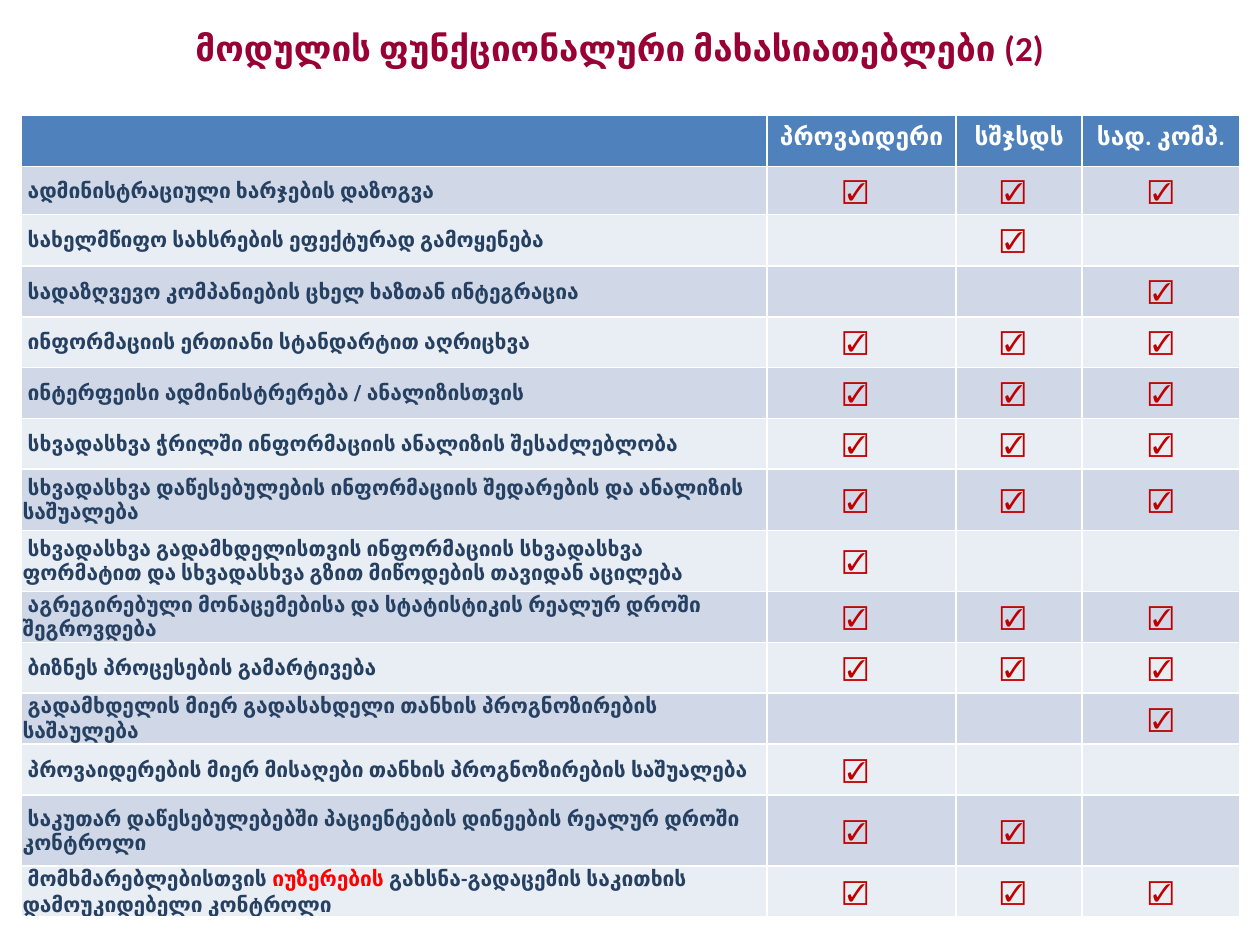
from dataclasses import dataclass
from pptx import Presentation
from pptx.dml.color import RGBColor as Rgb
from pptx.enum import text as t
from pptx.util import Pt


@dataclass(frozen=True)
class Theme:
    main: str = "Calibri"
    label: str = "Roboto"
    title: str = "990033"
    head: str = "4F81BD"
    white: str = "FFFFFF"
    ink: str = "254061"
    alert: str = "FF0000"
    tick: str = "C00000"
    bands: tuple = ("D0D8E8", "E9EDF4")
    big: float = 20
    mid: float = 14
    small: float = 12


THEME = Theme()
WIDTHS = (426, 108, 72, 90)
HEADS = ("", "პროვაიდერი", "სშჯსდს", "სად. კომპ.")
ROWS = (
    ("ადმინისტრაციული ხარჯების დაზოგვა", "111", 27.5),
    ("სახელმწიფო სახსრების ეფექტურად გამოყენება", "010", 29),
    ("სადაზღვევო კომპანიების ცხელ ხაზთან ინტეგრაცია", "001", 29),
    ("ინფორმაციის ერთიანი სტანდარტით აღრიცხვა", "111", 29),
    ("ინტერფეისი ადმინისტრერება / ანალიზისთვის", "111", 29),
    ("სხვადასხვა ჭრილში ინფორმაციის ანალიზის შესაძლებლობა", "111", 29),
    ("სხვადასხვა დაწესებულების ინფორმაციის შედარების და ანალიზის საშუალება", "111", 35),
    ("სხვადასხვა გადამხდელისთვის ინფორმაციის სხვადასხვა ფორმატით და "
     "სხვადასხვა გზით მიწოდების თავიდან აცილება", "100", 35),
    ("აგრეგირებული მონაცემებისა და სტატისტიკის რეალურ დროში შეგროვდება", "111", 29),
    ("ბიზნეს პროცესების გამარტივება", "111", 29),
    ("გადამხდელის მიერ გადასახდელი თანხის პროგნოზირების საშაულება", "001", 29),
    ("პროვაიდერების მიერ მისაღები თანხის პროგნოზირების საშუალება", "100", 29),
    ("საკუთარ დაწესებულებებში პაციენტების დინეების რეალურ დროში კონტროლი", "110", 40.5),
    (("მომხმარებლებისთვის ", "იუზერების ", "გახსნა", "-",
      "გადაცემის საკითხის დამოუკიდებელი კონტროლი"), "111", 29),
)


def add_run(para, words, size, color, font=THEME.main, bold=True):
    run = para.add_run()
    run.text = words
    run.font.name = font
    run.font.size = Pt(size)
    run.font.bold = bold
    run.font.color.rgb = Rgb.from_string(color)


def paint(cell, color):
    cell.fill.solid()
    cell.fill.fore_color.rgb = Rgb.from_string(color)


def inset(cell, left, top, right, bottom):
    cell.margin_left, cell.margin_top = Pt(left), Pt(top)
    cell.margin_right, cell.margin_bottom = Pt(right), Pt(bottom)


def add_title(slide, box, words):
    title = slide.shapes.title
    title.left, title.top, title.width, title.height = map(Pt, box)
    frame = title.text_frame
    frame.vertical_anchor = t.MSO_ANCHOR.MIDDLE
    para = frame.paragraphs[0]
    para.alignment = t.PP_ALIGN.CENTER
    add_run(para, words, THEME.big, THEME.title)


def fill_head(cells):
    for cell, words in zip(cells, HEADS):
        paint(cell, THEME.head)
        if words:
            para = cell.text_frame.paragraphs[0]
            para.alignment = t.PP_ALIGN.CENTER
            add_run(para, words, THEME.mid, THEME.white)


def fill_label(cell, label):
    inset(cell, 0.5, 0.5, 0.5, 0)
    para = cell.text_frame.paragraphs[0]
    para.space_before = Pt(6)
    parts = (label,) if isinstance(label, str) else label
    for i, part in enumerate(parts):
        words = part if i else " " + part
        color = THEME.alert if i == 1 else THEME.ink
        font = THEME.main if part == "-" else THEME.label
        add_run(para, words, THEME.small, color, font)


def fill_tick(cell, last):
    if not last:
        inset(cell, 0, 3.6, 7.2, 3.6)
    para = cell.text_frame.paragraphs[0]
    para.alignment = t.PP_ALIGN.CENTER
    para.space_before = Pt(6)
    add_run(para, "☑", THEME.mid, THEME.tick, bold=False)


def add_grid(slide, box):
    frame = slide.shapes.add_table(len(ROWS) + 1, len(WIDTHS), *map(Pt, box))
    grid = frame.table
    for col, width in zip(grid.columns, WIDTHS):
        col.width = Pt(width)
    grid.rows[0].height = Pt(28)
    fill_head(grid.rows[0].cells)
    for i, (label, marks, height) in enumerate(ROWS):
        row = grid.rows[i + 1]
        row.height = Pt(height)
        cells = list(row.cells)
        for cell in cells:
            paint(cell, THEME.bands[i % 2])
            cell.vertical_anchor = t.MSO_ANCHOR.MIDDLE
        fill_label(cells[0], label)
        for j, mark in enumerate(marks, 1):
            if mark == "1":
                fill_tick(cells[j], j == len(marks))


def main():
    deck = Presentation()
    deck.slide_width, deck.slide_height = Pt(720), Pt(540)
    slide = deck.slides.add_slide(deck.slide_layouts[5])
    add_title(slide, (30, 0, 648, 54), "მოდულის ფუნქციონალური მახასიათებლები (2)")
    add_grid(slide, (12.4, 66, 696, 457))
    deck.save("out.pptx")


if __name__ == "__main__":
    main()
